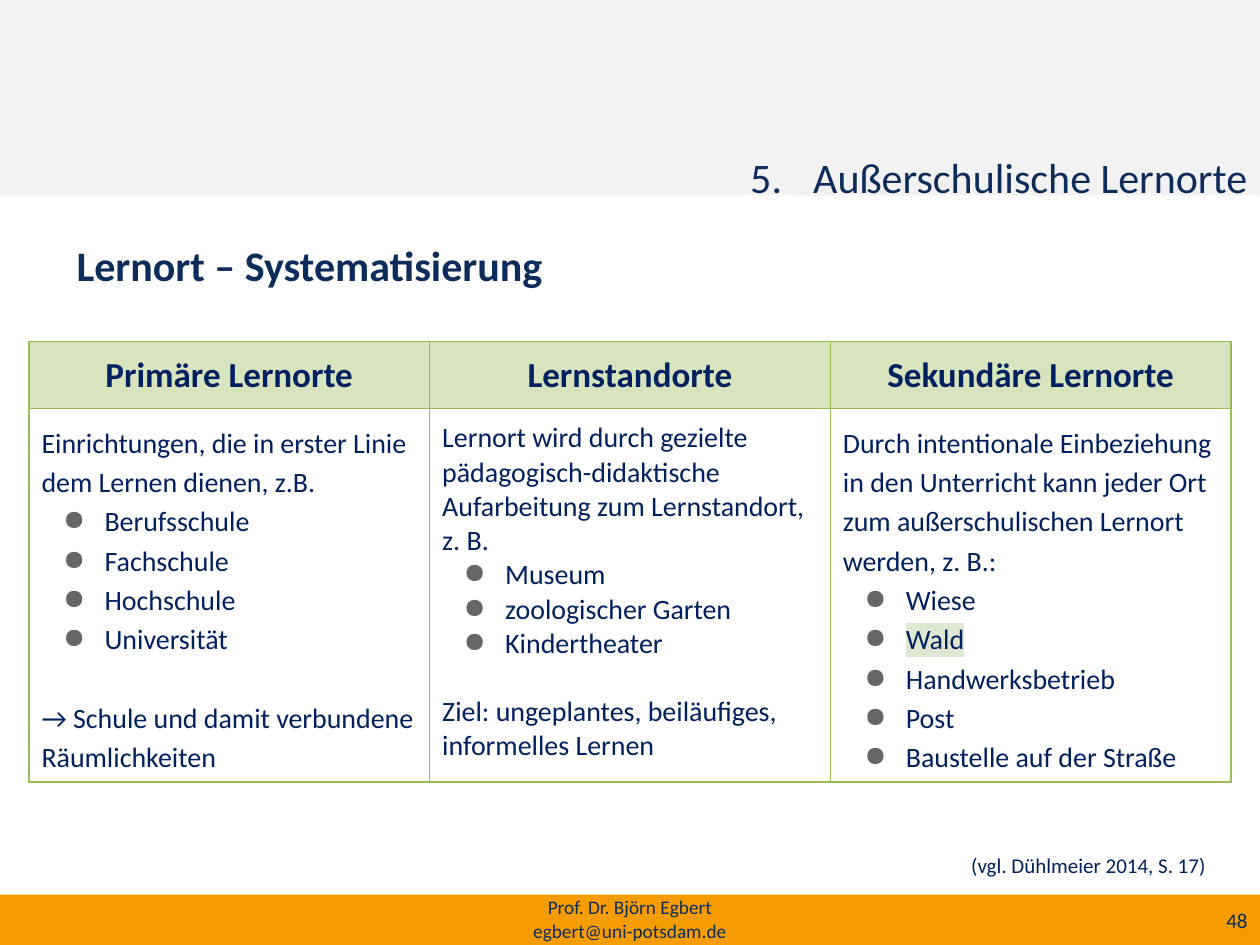
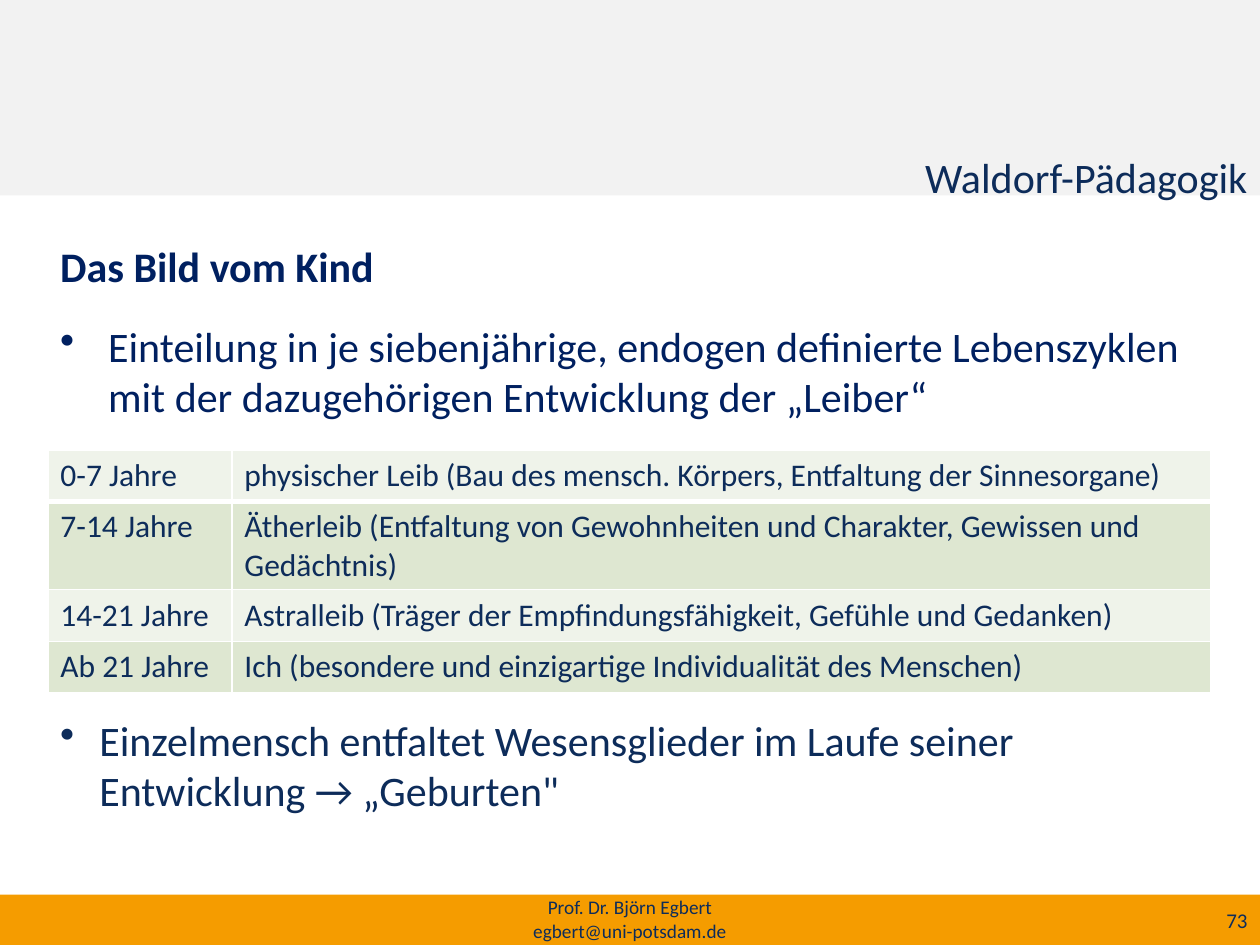
import dataclasses

import lxml.etree
import pptx
import pptx.dml.color
import pptx.enum.shapes
import pptx.enum.text
import pptx.oxml.ns
import pptx.util

COLS, ROWS = 100, 75
Align = pptx.enum.text.PP_ALIGN
Anchor = pptx.enum.text.MSO_ANCHOR
qn = pptx.oxml.ns.qn


@dataclasses.dataclass(frozen=True)
class Theme:
    """Colours, type sizes and font of the deck."""
    font: str = "Calibri"
    ink: str = "0D2C5A"
    navy: str = "002060"
    grey: str = "F2F2F2"
    gold: str = "F59C00"
    head: str = "D7E4BD"
    edge: str = "9BBB59"
    dot: str = "666666"
    pale: str = "EFF3EA"
    sage: str = "DEE7D1"
    white: str = "FFFFFF"
    big: int = 24
    mid: int = 20
    row: int = 18
    body: int = 16
    note: int = 12
    foot: int = 11


@dataclasses.dataclass(frozen=True)
class Line:
    """One paragraph with its bullet, hang in inches and gap in points."""
    text: str
    mark: str = ""
    hang: float = 0
    left: float = 0
    dot: str = ""
    gap: float = 0
    bold: bool = False
    glow: str = ""


@dataclasses.dataclass(frozen=True)
class Box:
    """A region in columns and rows of the slide grid."""
    x: float
    y: float
    w: float
    h: float

    def emu(self, deck):
        """Return left, top, width and height on the slide."""
        col, row = deck.slide_width / COLS, deck.slide_height / ROWS
        return [int(n) for n in (self.x * col, self.y * row, self.w * col, self.h * row)]


T = Theme()
PAGE = Box(0, 0, COLS, ROWS)


def rgb(code):
    """Turn a hex code into a colour."""
    return pptx.dml.color.RGBColor.from_string(code)


def node(root, tag, **attrs):
    """Add a drawing element under root."""
    return lxml.etree.SubElement(root, qn(tag), **attrs)


def bullet(para, line):
    """Give a paragraph its bullet or number and hanging indent."""
    props = para._p.get_or_add_pPr()
    props.set("marL", str(pptx.util.Inches(line.left)))
    props.set("indent", str(-pptx.util.Inches(line.hang)))
    if line.dot:
        node(node(props, "a:buClr"), "a:srgbClr", val=line.dot)
    if line.mark.isdigit():
        node(props, "a:buAutoNum", type="arabicPeriod", startAt=line.mark)
    else:
        node(props, "a:buChar", char=line.mark)


def shine(run, code):
    """Put a highlight behind a run."""
    mark = lxml.etree.Element(qn("a:highlight"))
    node(mark, "a:srgbClr", val=code)
    run._r.rPr.find(qn("a:solidFill")).addnext(mark)


def write(frame, lines, size, ink, align=Align.LEFT, lead=None):
    """Fill a text frame with formatted lines."""
    frame.text = "\n".join(line.text for line in lines)
    for para, line in zip(frame.paragraphs, lines):
        if line.mark:
            bullet(para, line)
        para.alignment = align
        if lead:
            para.line_spacing = lead
        if line.gap:
            para.space_before = pptx.util.Pt(line.gap)
        for run in para.runs:
            run.font.name, run.font.size = T.font, pptx.util.Pt(size)
            run.font.bold, run.font.color.rgb = line.bold, rgb(ink)
            if line.glow:
                shine(run, line.glow)


def label(deck, slide, box, lines, size, ink, align=Align.LEFT):
    """Add a wrapped text box."""
    frame = slide.shapes.add_textbox(*box.emu(deck)).text_frame
    frame.word_wrap = True
    write(frame, lines, size, ink, align)
    return frame


def band(deck, slide, box, code):
    """Add a plain band behind the title."""
    shape = slide.shapes.add_shape(pptx.enum.shapes.MSO_SHAPE.RECTANGLE, *box.emu(deck))
    shape.shadow.inherit = False
    shape.fill.solid()
    shape.fill.fore_color.rgb = rgb(code)
    shape.line.fill.background()
    slide.shapes.title.element.addprevious(shape.element)


def header(deck, slide, box, line):
    """Draw the top band and set the title on its lower edge."""
    band(deck, slide, box, T.grey)
    title = slide.shapes.title
    spot = Box(box.x + 11.8, box.y + box.h - 4, box.w - 11.8, 7.1)
    title.left, title.top, title.width, title.height = spot.emu(deck)
    frame = title.text_frame
    frame.vertical_anchor = Anchor.TOP
    frame.auto_size = pptx.enum.text.MSO_AUTO_SIZE.NONE
    write(frame, [line], T.big, T.ink, Align.RIGHT)


def footer(deck, slide, box, page):
    """Draw the bottom band with author and page number."""
    band(deck, slide, box, T.gold)
    name = Box(box.x + (box.w - 17.4) / 2, box.y - 0.4, 17.4, 4.7)
    text = "Prof. Dr. Björn Egbert\vegbert@uni-potsdam.de"
    label(deck, slide, name, [Line(text)], T.foot, T.ink, Align.CENTER).word_wrap = False
    spot = Box(box.x + box.w - 22.5, box.y, 22.5, box.h)
    frame = label(deck, slide, spot, [Line(page)], T.note, T.ink, Align.RIGHT)
    frame.vertical_anchor = Anchor.MIDDLE


def start(deck, title, page):
    """Add a slide with its shared header and footer."""
    slide = deck.slides.add_slide(deck.slide_layouts[5])
    header(deck, slide, Box(PAGE.x, PAGE.y, PAGE.w, 15.5), title)
    footer(deck, slide, Box(PAGE.x, PAGE.h - 4, PAGE.w, 4), page)
    return slide


def border(cell, code, base=1):
    """Line all four sides of a cell, the base with its own width."""
    props = cell._tc.get_or_add_tcPr()
    for spot, side in enumerate("LRTB"):
        width = pptx.util.Pt(base if side == "B" else 1)
        edge = lxml.etree.Element(qn("a:ln" + side), w=str(width))
        node(node(edge, "a:solidFill"), "a:srgbClr", val=code)
        props.insert(spot, edge)


def paint(cell, code):
    """Fill a cell, or clear it without a colour."""
    if code:
        cell.fill.solid()
        cell.fill.fore_color.rgb = rgb(code)
    else:
        cell.fill.background()


def grid(deck, slide, box, wide, high):
    """Add a table with the given column widths and row heights."""
    table = slide.shapes.add_table(len(high), len(wide), *box.emu(deck)).table
    table.first_row = table.horz_banding = False
    for col, size in zip(table.columns, wide):
        col.width = int(size * deck.slide_width / COLS)
    for row, size in zip(table.rows, high):
        row.height = int(size * deck.slide_height / ROWS)
    return table


def places(deck, slide, box, parts):
    """Lay out headed columns of learning places."""
    high = 5.3
    table = grid(deck, slide, box, [box.w / len(parts)] * len(parts), [high, box.h - high])
    for col, (head, lead, lines) in enumerate(parts):
        top, low = table.cell(0, col), table.cell(1, col)
        write(top.text_frame, [Line(head, bold=True)], T.mid, T.navy, Align.CENTER)
        write(low.text_frame, lines, T.body, T.navy, lead=lead)
        for cell, code in ((top, T.head), (low, None)):
            cell.margin_top = cell.margin_bottom = pptx.util.Inches(0.1)
            paint(cell, code)
            border(cell, T.edge)


def stages(deck, slide, box, rows):
    """Lay out the ages and their bodies in striped rows."""
    slim, age = 4.1, 14.6
    table = grid(deck, slide, box, [age, box.w - age], [slim, box.h - 3 * slim, slim, slim])
    for num, row in enumerate(rows):
        for col, text in enumerate(row):
            cell = table.cell(num, col)
            write(cell.text_frame, [Line(text)], T.row, T.ink)
            paint(cell, T.sage if num % 2 else T.pale)
            border(cell, T.white, 1 if num else 3)


def items(*names, glow=""):
    """Make bulleted lines, one of them highlighted."""
    return [Line(name, "●", 0.33, 0.5, T.dot, glow=T.sage if name == glow else "")
            for name in names]


def sites(deck):
    """Build the slide on kinds of learning places."""
    slide = start(deck, Line("Außerschulische Lernorte", "5", 0.5, 0.5), "48")
    label(deck, slide, Box(5.1, 18.5, 92.6, 6.3),
          [Line("Lernort – Systematisierung", bold=True)], T.big, T.ink)
    places(deck, slide, Box(2.3, 27.1, 95.4, 34.9), [
        ("Primäre Lernorte", 1.15, [
            Line("Einrichtungen, die in erster Linie dem Lernen dienen, z.B."),
            *items("Berufsschule", "Fachschule", "Hochschule", "Universität"),
            Line("→ Schule und damit verbundene Räumlichkeiten", gap=22.5)]),
        ("Lernstandorte", None, [
            Line("Lernort wird durch gezielte pädagogisch-didaktische "
                 "Aufarbeitung zum Lernstandort, z. B."),
            *items("Museum", "zoologischer Garten", "Kindertheater"),
            Line("Ziel: ungeplantes, beiläufiges, informelles Lernen", gap=19.5)]),
        ("Sekundäre Lernorte", 1.15, [
            Line("Durch intentionale Einbeziehung in den Unterricht kann jeder Ort "
                 "zum außerschulischen Lernort werden, z. B.:"),
            *items("Wiese", "Wald", "Handwerksbetrieb", "Post",
                   "Baustelle auf der Straße", glow="Wald")]),
    ])
    note = label(deck, slide, Box(76.1, 66.7, 21.5, 4),
                 [Line("(vgl. Dühlmeier 2014, S. 17)")], T.note, T.navy)
    note.margin_top = note.margin_bottom = pptx.util.Inches(0.1)


def child(deck):
    """Build the slide on the view of the child."""
    slide = start(deck, Line("Waldorf-Pädagogik"), "73")
    left, wide = 3.8, 92.3
    label(deck, slide, Box(left, 18.6, wide, 50.8), [
        Line("Das Bild vom Kind", bold=True),
        Line("Einteilung in je siebenjährige, endogen definierte Lebenszyklen "
             "mit der dazugehörigen Entwicklung der „Leiber“", "•", 0.38, 0.38, gap=16.8),
    ], T.big, T.navy)
    stages(deck, slide, Box(left, 35.7, wide, 19.2), [
        ("0-7 Jahre", "physischer Leib (Bau des mensch. Körpers, Entfaltung der Sinnesorgane)"),
        ("7-14 Jahre", "Ätherleib (Entfaltung von Gewohnheiten und Charakter, "
                       "Gewissen und Gedächtnis)"),
        ("14-21 Jahre", "Astralleib (Träger der Empfindungsfähigkeit, Gefühle und Gedanken)"),
        ("Ab 21 Jahre", "Ich (besondere und einzigartige Individualität des Menschen)"),
    ])
    label(deck, slide, Box(left, 56.2, wide, 9.1), [
        Line("Einzelmensch entfaltet Wesensglieder im Laufe seiner "
             'Entwicklung → „Geburten"', "•", 0.31, 0.31)], T.big, T.ink)


def main():
    """Build and save the deck."""
    deck = pptx.Presentation()
    deck.slide_width, deck.slide_height = pptx.util.Inches(10), pptx.util.Inches(7.5)
    sites(deck)
    child(deck)
    deck.save("out.pptx")


if __name__ == "__main__":
    main()
